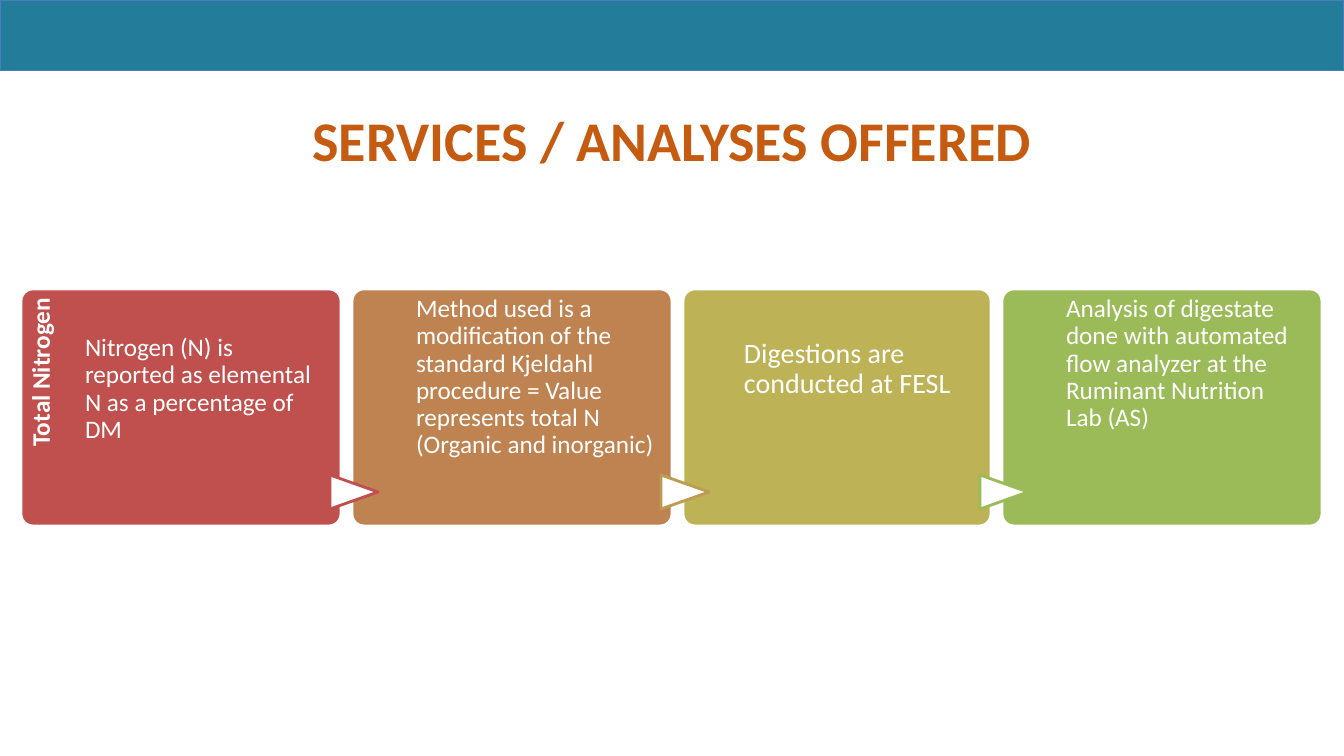
import dataclasses

import pptx
import pptx.dml.color
import pptx.enum.shapes
import pptx.enum.text
import pptx.util

SHAPE = pptx.enum.shapes.MSO_SHAPE
ALIGN = pptx.enum.text.PP_ALIGN
PX = 914400 / 100.8


@dataclasses.dataclass(frozen=True)
class Theme:
    font: str = "Calibri"
    white: str = "FFFFFF"
    banner: str = "237C9A"
    banner_edge: str = "4B7EBC"
    heading: str = "C55A11"
    cards: tuple = ("C0504D", "BE8351", "BDB255", "9BBB59")
    arrows: tuple = ("C0504D", "BD9B53", "9BBB59")
    heading_size: int = 40
    large_size: int = 20
    body_size: int = 18
    edge_width: float = 2
    banner_edge_width: float = 0.75


def emu(px):
    return pptx.util.Emu(round(px * PX))


def rgb(value):
    return pptx.dml.color.RGBColor.from_string(value)


class SlideBuilder:
    def __init__(self, deck, theme):
        self.theme = theme
        self.slide = deck.slides.add_slide(deck.slide_layouts[6])

    def shape(self, kind, box, fill, edge, edge_width, rotation=0):
        figure = self.slide.shapes.add_shape(kind, *map(emu, box))
        figure.shadow.inherit = False
        figure.fill.solid()
        figure.fill.fore_color.rgb = rgb(fill)
        figure.line.color.rgb = rgb(edge)
        figure.line.width = pptx.util.Pt(edge_width)
        figure.rotation = rotation
        return figure

    def text(self, words, box, size, color, bold=False, align=ALIGN.LEFT,
             insets=(0, 7, 0, 0), spacing=0.9, rotation=0):
        label = self.slide.shapes.add_textbox(*map(emu, box))
        label.rotation = rotation
        frame = label.text_frame
        frame.word_wrap = True
        frame.margin_left, frame.margin_top, frame.margin_right, frame.margin_bottom = map(emu, insets)
        frame.text = words
        paragraph = frame.paragraphs[0]
        paragraph.alignment = align
        paragraph.line_spacing = spacing
        font = paragraph.runs[0].font
        font.name = self.theme.font
        font.size = pptx.util.Pt(size)
        font.bold = bold
        font.color.rgb = rgb(color)

    def card(self, box, fill):
        panel = self.shape(SHAPE.ROUNDED_RECTANGLE, box, fill,
                           self.theme.white, self.theme.edge_width)
        panel.adjustments[0] = 0.05

    def arrow(self, center_x, center_y, edge):
        width, height = 34, 48
        box = (center_x - width // 2, center_y - height // 2, width, height)
        self.shape(SHAPE.FLOWCHART_EXTRACT, box, self.theme.white, edge,
                   self.theme.edge_width, rotation=90)


def main():
    theme = Theme()
    deck = pptx.Presentation()
    deck.slide_width, deck.slide_height = emu(1344), emu(756)
    page = SlideBuilder(deck, theme)

    page.shape(SHAPE.RECTANGLE, (0, 0, 1344, 71), theme.banner,
               theme.banner_edge, theme.banner_edge_width)
    page.text("SERVICES / ANALYSES OFFERED", (67, 100, 1210, 66),
              theme.heading_size, theme.heading, bold=True,
              align=ALIGN.CENTER, insets=(10, 5, 10, 0), spacing=1.0)

    steps = (
        ("Nitrogen (N) is reported as elemental N as a percentage of DM",
         320, 39, theme.body_size),
        ("Method used is a modification of the standard Kjeldahl procedure = "
         "Value represents total N (Organic and inorganic)",
         320, 0, theme.body_size),
        ("Digestions are conducted at FESL", 308, 43, theme.large_size),
        ("Analysis of digestate done with automated flow analyzer at the "
         "Ruminant Nutrition Lab (AS)", 320, 0, theme.body_size),
    )
    left, top, height, gap = 21, 289, 237, 11
    for index, (words, width, drop, size) in enumerate(steps):
        page.card((left, top, width, height), theme.cards[index])
        if index:
            page.arrow(left + 2, 492, theme.arrows[index - 1])
        indent = width // 5
        page.text(words, (left + indent, top + drop, width - indent - 18, height - drop),
                  size, theme.white)
        left += width + gap

    page.text("Total Nitrogen", (-44, 354, 194, 64), theme.body_size,
              theme.white, bold=True, align=ALIGN.RIGHT,
              insets=(0, 7, 9, 0), rotation=270)
    deck.save("out.pptx")


if __name__ == "__main__":
    main()
